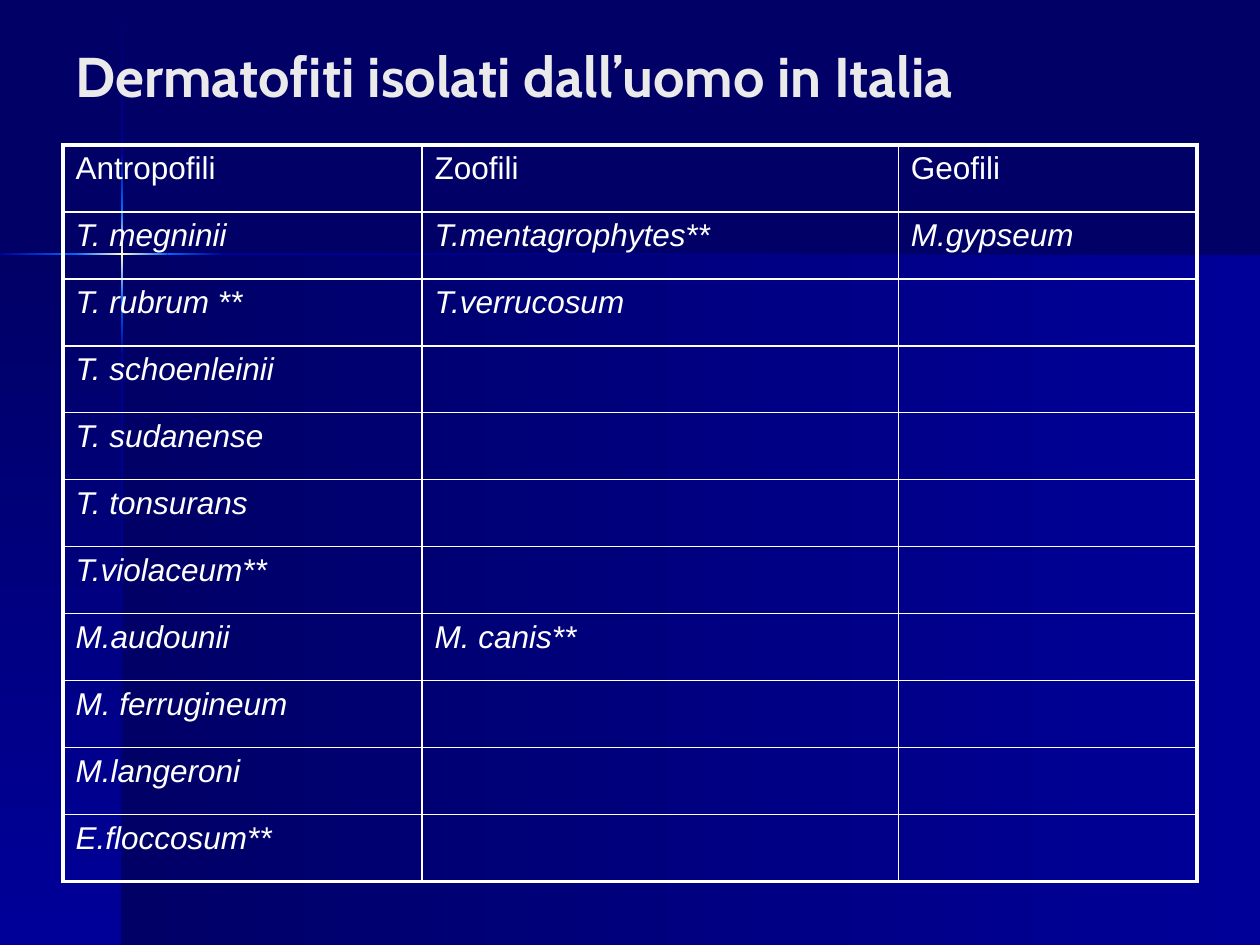
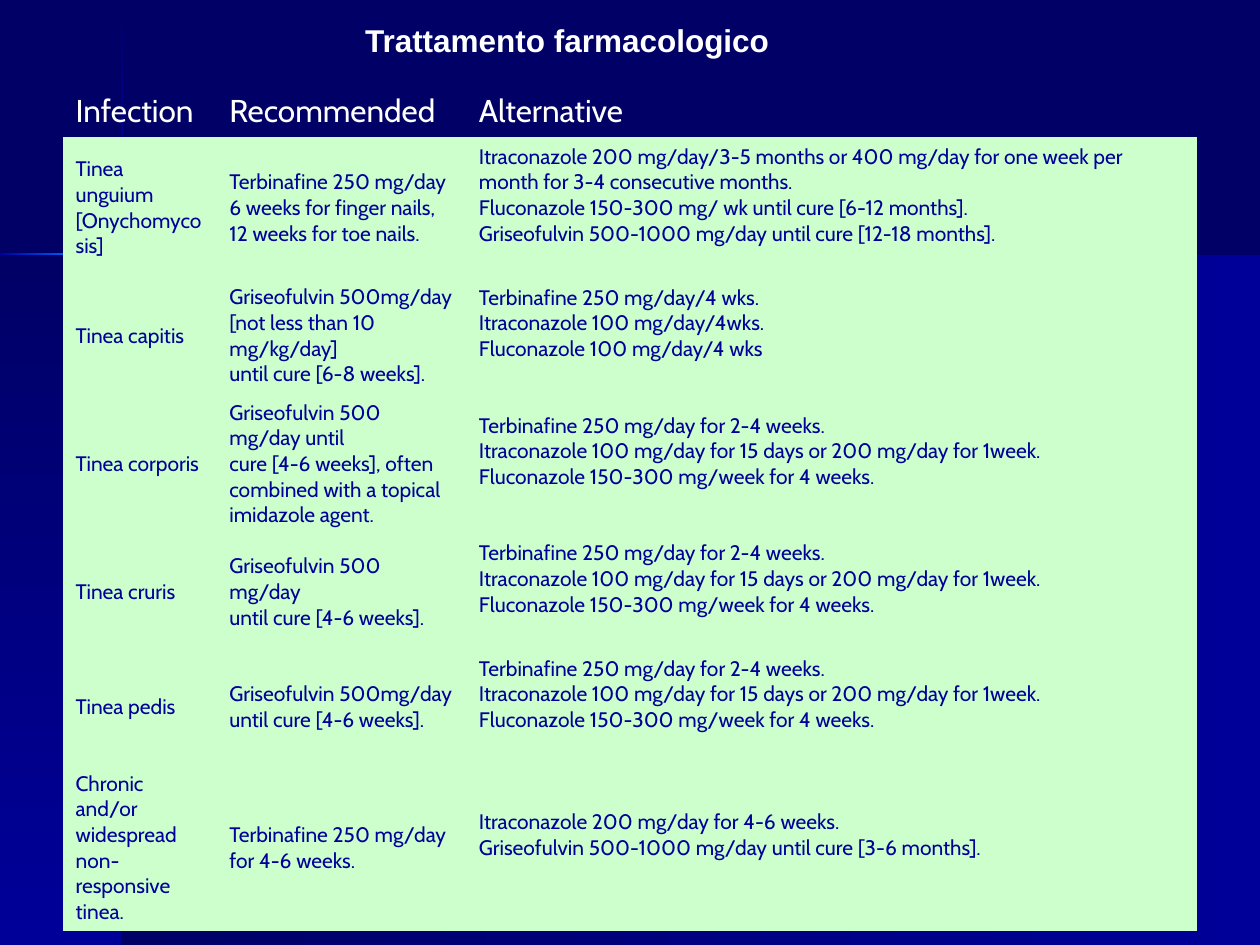
"""Build two slides on dermatophytes: the species found in Italy and their drug treatment."""
from lxml.etree import SubElement
from pptx import Presentation
from pptx.dml.color import RGBColor
from pptx.enum.shapes import MSO_SHAPE
from pptx.enum.text import MSO_ANCHOR
from pptx.oxml.ns import qn
from pptx.util import Cm, Pt

NAVY, BLUE, BRIGHT, CREAM = "000066", "000099", "0066FF", "FFFFCC"
WHITE, TITLE_GREY, MINT = "FFFFFF", "EAEAEA", "CCFFCC"
NO_STYLE = "{2D5ABB26-0587-4C30-8999-92F81FD0307C}"
ACROSS, DOWN = 0, 270
THICK, THIN = Pt(2.25), Pt(1)

BANDS = [
    (2.46, 5.13, 22.94, 13.92, ACROSS, [NAVY, BLUE]),
    (0, 5.13, 2.46, 13.92, DOWN, [NAVY, BLUE]),
    (2.44, 0.03, 0.05, 3.05, DOWN, [NAVY, BLUE]),
    (2.44, 7.16, 0.05, 11.89, DOWN, [BLUE, NAVY]),
    (4.5, 5.1, 20.9, 0.05, ACROSS, [BLUE, NAVY]),
    (2.44, 6.05, 0.05, 1.11, DOWN, [BRIGHT, BLUE]),
    (2.44, 3.08, 0.05, 1.11, DOWN, [BLUE, BRIGHT]),
    (2.44, 4.19, 0.05, 1.86, DOWN, [BRIGHT, CREAM, BRIGHT]),
    (0, 5.1, 1.54, 0.05, ACROSS, [BLUE, BRIGHT]),
    (3.38, 5.1, 1.12, 0.05, ACROSS, [BRIGHT, BLUE]),
    (1.52, 5.1, 1.86, 0.05, ACROSS, [BRIGHT, CREAM, BRIGHT]),
]

SPECIES = [
    ("Antropofili", "Zoofili", "Geofili"),
    ("T. megninii", "T.mentagrophytes**", "M.gypseum"),
    ("T. rubrum **", "T.verrucosum", ""),
    ("T. schoenleinii", "", ""),
    ("T. sudanense", "", ""),
    ("T. tonsurans", "", ""),
    ("T.violaceum**", "", ""),
    ("M.audounii", "M. canis**", ""),
    ("M. ferrugineum", "", ""),
    ("M.langeroni", "", ""),
    ("E.floccosum**", "", ""),
]

SKIN_ALTERNATIVE = (
    "Terbinafine 250 mg/day for 2-4 weeks.\n"
    "Itraconazole 100 mg/day for 15 days or 200 mg/day for 1week.\n"
    "Fluconazole 150-300 mg/week for 4 weeks."
)
TREATMENTS = [
    ("Infection", "Recommended", "Alternative"),
    ("Tinea unguium\n[Onychomycosis]",
     "Terbinafine 250 mg/day\n6 weeks for finger nails,\n12 weeks for toe nails.",
     "Itraconazole 200 mg/day/3-5 months or 400 mg/day for one week per month "
     "for 3-4 consecutive months.\n"
     "Fluconazole 150-300 mg/ wk until cure [6-12 months].\n"
     "Griseofulvin 500-1000 mg/day until cure [12-18 months]."),
    ("Tinea capitis",
     "Griseofulvin 500mg/day\n[not less than 10 mg/kg/day]\nuntil cure [6-8 weeks].",
     "Terbinafine 250 mg/day/4 wks.\nItraconazole 100 mg/day/4wks.\n"
     "Fluconazole 100 mg/day/4 wks"),
    ("Tinea corporis",
     "Griseofulvin 500 mg/day until\ncure [4-6 weeks], often\n"
     "combined with a topical\nimidazole agent.",
     SKIN_ALTERNATIVE),
    ("Tinea cruris", "Griseofulvin 500 mg/day\nuntil cure [4-6 weeks].", SKIN_ALTERNATIVE),
    ("Tinea pedis", "Griseofulvin 500mg/day\nuntil cure [4-6 weeks].", SKIN_ALTERNATIVE),
    ("Chronic and/or\nwidespread\nnon-responsive\ntinea.",
     "Terbinafine 250 mg/day\nfor 4-6 weeks.",
     "Itraconazole 200 mg/day for 4-6 weeks.\n"
     "Griseofulvin 500-1000 mg/day until cure [3-6 months]."),
]


def color(hex_code):
    return RGBColor.from_string(hex_code)


def write(frame, text, font_name, size, hex_code, bold=False, italic=False):
    frame.text = text
    for paragraph in frame.paragraphs:
        font = paragraph.font
        font.name, font.size = font_name, Pt(size)
        font.bold, font.italic = bold, italic
        font.color.rgb = color(hex_code)


deck = Presentation()
deck.slide_width, deck.slide_height = Cm(25.4), Cm(19.05)

pages = [
    ("Dermatofiti isolati dall’uomo in Italia", (1.27, -0.08, 22.86, 3.18),
     ("Cabin", 32, TITLE_GREY), SPECIES, 2.92, (7.24, 9.6, 6.02), [1.35] * 11),
    ("Trattamento farmacologico", (7.11, 0.3, 10.59, 1.02),
     ("Arial", 18, WHITE), TREATMENTS, 1.73, (3.1, 5.03, 14.73),
     [1.04, 2.84, 2.32, 2.84, 2.32, 2.32, 3.36]),
]
grids = []
for title, title_place, title_font, entries, table_top, widths, heights in pages:
    slide = deck.slides.add_slide(deck.slide_layouts[6])
    slide.background.fill.solid()
    slide.background.fill.fore_color.rgb = color(NAVY)

    for left, top, width, height, angle, shades in BANDS:
        band = slide.shapes.add_shape(
            MSO_SHAPE.RECTANGLE, Cm(left), Cm(top), Cm(width), Cm(height))
        band.shadow.inherit = False
        band.line.fill.background()
        band.fill.gradient()
        band.fill.gradient_angle = angle
        stops = band.element.spPr.find(".//" + qn("a:gsLst"))
        stops.clear()
        for index, shade in enumerate(shades):
            stop = SubElement(stops, qn("a:gs"), pos=str(100000 * index // (len(shades) - 1)))
            SubElement(stop, qn("a:srgbClr"), val=shade)

    heading = slide.shapes.add_textbox(*map(Cm, title_place)).text_frame
    heading.word_wrap = True
    heading.vertical_anchor = MSO_ANCHOR.MIDDLE
    write(heading, title, *title_font, bold=True)

    grid = slide.shapes.add_table(
        len(entries), len(widths), Cm(1.27), Cm(table_top), Cm(22.86), Cm(sum(heights))).table
    grid.first_row = grid.horz_banding = False
    grid._tbl.tblPr.find(qn("a:tableStyleId")).text = NO_STYLE
    for column, width in zip(grid.columns, widths):
        column.width = Cm(width)
    for row, height in zip(grid.rows, heights):
        row.height = Cm(height)
    grids.append(grid)

species_grid, treatment_grid = grids

for r, names in enumerate(SPECIES):
    for c, name in enumerate(names):
        cell = species_grid.cell(r, c)
        write(cell.text_frame, name, "Arial", 18, WHITE, italic=r > 0)
        outer_edges = {"a:lnL": c == 0, "a:lnR": c == len(names) - 1,
                       "a:lnT": r == 0, "a:lnB": r == len(SPECIES) - 1}
        for edge, is_outer in outer_edges.items():
            border = SubElement(cell._tc.get_or_add_tcPr(), qn(edge),
                                w=str(THICK if is_outer else THIN))
            SubElement(SubElement(border, qn("a:solidFill")), qn("a:srgbClr"), val=WHITE)
        cell.fill.background()

for r, regimen in enumerate(TREATMENTS):
    for c, entry in enumerate(regimen):
        cell = treatment_grid.cell(r, c)
        cell.vertical_anchor = MSO_ANCHOR.MIDDLE
        if r == 0:
            write(cell.text_frame, entry, "Cabin", 18, WHITE)
            cell.fill.background()
            continue
        write(cell.text_frame, entry, "Cabin", 12, BLUE)
        cell.fill.solid()
        cell.fill.fore_color.rgb = color(MINT)
        if c == 2:
            cell.margin_bottom = Cm(0.64)

deck.save("out.pptx")
